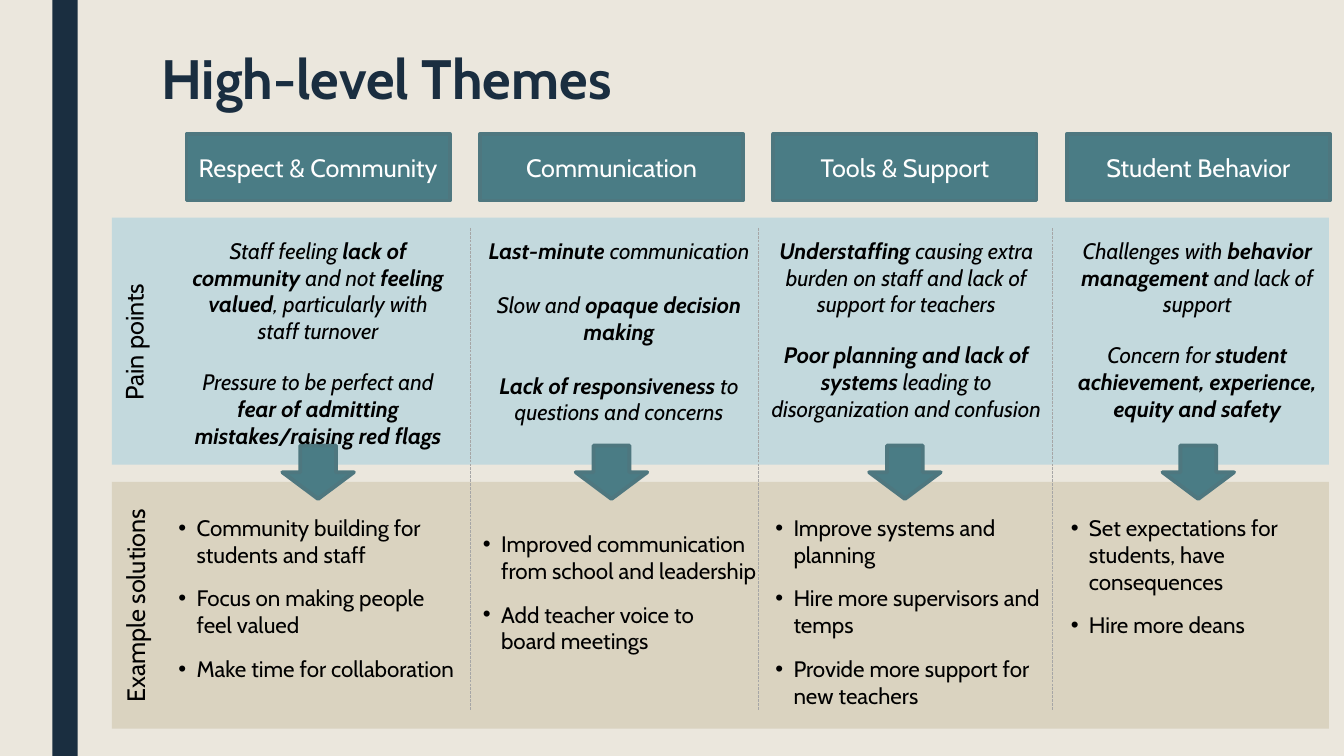
from dataclasses import dataclass

from lxml.etree import SubElement
from pptx import Presentation
from pptx.dml.color import RGBColor
from pptx.enum.dml import MSO_LINE
from pptx.enum.shapes import MSO_CONNECTOR, MSO_SHAPE
from pptx.enum.text import MSO_ANCHOR, MSO_AUTO_SIZE, PP_ALIGN
from pptx.oxml.ns import qn
from pptx.shapes.autoshape import Shape
from pptx.slide import Slide
from pptx.text.text import TextFrame, _Paragraph
from pptx.util import Inches, Pt

FONT = "Cabin"
NAVY, TEAL, TEAL_EDGE = "1A2E40", "4A7C85", "4E777F"
BLUE, SAND, CREAM = "C3D9DD", "DAD3C0", "EBE7DD"
BLACK, WHITE, GREY = "000000", "FFFFFF", "A6A6A6"

HEAD_LEFT, HEAD_WIDTH, PITCH = 1.85, 2.61, 2.91
ARROW_WIDTH = 0.71


@dataclass
class Box:
    left: float
    top: float
    width: float
    height: float


@dataclass
class Theme:
    """One column; asterisks in the pain points enclose bold words."""
    heading: str
    pain_box: Box
    pain_gap: float
    pains: list[str]
    list_box: Box
    solutions: list[str]


@dataclass
class Band:
    label: str
    box: Box
    label_box: Box
    color: str


THEMES = [
    Theme("Respect & Community", Box(1.85, 2.3, 2.61, 2.26), 17,
          ["Staff feeling *lack of community* and not *feeling valued*, "
           "particularly with staff turnover",
           "Pressure to be perfect and *fear of admitting mistakes/raising red flags*"],
          Box(1.77, 5.05, 2.76, 1.78),
          ["Community building for students and staff",
           "Focus on making people feel valued",
           "Make time for collaboration"]),
    Theme("Communication", Box(4.77, 2.3, 2.74, 1.99), 19.4,
          ["*Last-minute *communication",
           "Slow and *opaque decision making*",
           "*Lack of responsiveness *to questions and concerns"],
          Box(4.79, 5.21, 2.76, 1.35),
          ["Improved communication from school and leadership",
           "Add teacher voice to\nboard meetings"]),
    Theme("Tools & Support", Box(7.62, 2.3, 2.74, 2.26), 17,
          ["*Understaffing *causing extra burden on staff and lack of support for teachers",
           "*Poor planning and lack of systems* leading to disorganization and confusion"],
          Box(7.69, 5.05, 2.76, 2.05),
          ["Improve systems and planning",
           "Hire more supervisors and temps",
           "Provide more support for new teachers"]),
    Theme("Student Behavior", Box(10.57, 2.3, 2.61, 1.95), 17,
          ["Challenges with *behavior management* and lack of support",
           "Concern for *student achievement, experience, equity and safety*"],
          Box(10.62, 5.05, 2.76, 1.35),
          ["Set expectations for students, have consequences",
           "Hire more deans"]),
]
BANDS = [
    Band("Pain points", Box(1.11, 2.16, 12.07, 2.45), Box(0.63, 3.18, 1.39, 0.4), BLUE),
    Band("Example solutions", Box(1.11, 4.78, 12.07, 2.45), Box(0.27, 5.8, 2.14, 0.4), SAND),
]
DIVIDERS = [4.66, 7.52, 10.44]


def rgb(color: str) -> RGBColor:
    return RGBColor.from_string(color)


def inches(box: Box) -> tuple[int, int, int, int]:
    return Inches(box.left), Inches(box.top), Inches(box.width), Inches(box.height)


def place(sp: Shape, box: Box) -> None:
    sp.left, sp.top, sp.width, sp.height = inches(box)


def add_run(p: _Paragraph, text: str, size: float, color: str = BLACK,
            bold: bool = False, italic: bool = False) -> None:
    r = p.add_run()
    r.text = text
    r.font.name, r.font.size = FONT, Pt(size)
    r.font.bold, r.font.italic = bold, italic
    r.font.color.rgb = rgb(color)


def add_preset(s: Slide, kind: MSO_SHAPE, box: Box, fill: str, edge: str = "") -> Shape:
    sp = s.shapes.add_shape(kind, *inches(box))
    sp.shadow.inherit = False
    sp.fill.solid()
    sp.fill.fore_color.rgb = rgb(fill)
    if edge:
        sp.line.color.rgb = rgb(edge)
        sp.line.width = Pt(2.75)
    else:
        sp.line.fill.background()
    return sp


def prepare_frame(tf: TextFrame) -> None:
    """Set up a wrapping, top-aligned frame without side insets."""
    tf.word_wrap = True
    tf.auto_size = MSO_AUTO_SIZE.NONE
    tf.vertical_anchor = MSO_ANCHOR.TOP
    tf.margin_left = tf.margin_right = 0


def next_paragraph(tf: TextFrame, index: int) -> _Paragraph:
    return tf.add_paragraph() if index else tf.paragraphs[0]


def add_heading(s: Slide, text: str, left: float) -> None:
    sp = add_preset(s, MSO_SHAPE.RECTANGLE, Box(left, 1.33, HEAD_WIDTH, 0.66), TEAL, TEAL_EDGE)
    sp.text_frame.vertical_anchor = MSO_ANCHOR.MIDDLE
    p = sp.text_frame.paragraphs[0]
    p.alignment = PP_ALIGN.CENTER
    add_run(p, text, 18, WHITE)


def add_band(s: Slide, band: Band) -> None:
    add_preset(s, MSO_SHAPE.RECTANGLE, band.box, band.color)
    sp = s.shapes.add_textbox(*inches(band.label_box))
    sp.rotation = 270
    sp.text_frame.word_wrap = False
    add_run(sp.text_frame.paragraphs[0], band.label, 18)


def add_divider(s: Slide, x: float) -> None:
    line = s.shapes.add_connector(MSO_CONNECTOR.STRAIGHT, Inches(x), Inches(2.26),
                                  Inches(x), Inches(7.04))
    line.line.color.rgb = rgb(GREY)
    line.line.width = Pt(0.25)
    line.line.dash_style = MSO_LINE.LONG_DASH
    SubElement(line._element.spPr, qn("a:effectLst"))


def add_pains(s: Slide, theme: Theme) -> None:
    tf = s.shapes.add_textbox(*inches(theme.pain_box)).text_frame
    prepare_frame(tf)
    for i, pain in enumerate(theme.pains):
        p = next_paragraph(tf, i)
        p.alignment = PP_ALIGN.CENTER
        p.space_before = Pt(theme.pain_gap if i else 0)
        for j, part in enumerate(pain.split("*")):
            if part:
                add_run(p, part, 16, bold=j % 2 == 1, italic=True)


def fill_solutions(s: Slide, sp: Shape, theme: Theme) -> None:
    """Fill a body placeholder with bullets and bring it to the front."""
    place(sp, theme.list_box)
    s.shapes._spTree.append(sp._element)
    tf = sp.text_frame
    prepare_frame(tf)
    for i, solution in enumerate(theme.solutions):
        p = next_paragraph(tf, i)
        p.space_before, p.space_after = Pt(0), Pt(12)
        pPr = p._p.get_or_add_pPr()
        pPr.set("marL", str(Inches(0.18)))
        pPr.set("indent", str(-Inches(0.18)))
        SubElement(pPr, qn("a:buChar")).set("char", "•")
        for j, text in enumerate(solution.split("\n")):
            if j:
                p.add_line_break()
            add_run(p, text, 16)


def fill_title(s: Slide, text: str) -> None:
    sp = s.shapes.title
    place(sp, Box(1.5, 0.45, 11.56, 0.73))
    sp.text_frame.auto_size = MSO_AUTO_SIZE.NONE
    sp.text_frame.vertical_anchor = MSO_ANCHOR.MIDDLE
    p = sp.text_frame.paragraphs[0]
    p.alignment = PP_ALIGN.LEFT
    p.line_spacing = 0.89
    add_run(p, text, 39.6, NAVY, bold=True)


def main() -> None:
    prs = Presentation()
    prs.slide_width, prs.slide_height = Inches(13.33), Inches(7.5)
    s = prs.slides.add_slide(prs.slide_layouts.get_by_name("Comparison"))
    s.background.fill.solid()
    s.background.fill.fore_color.rgb = rgb(CREAM)

    add_preset(s, MSO_SHAPE.RECTANGLE, Box(0.52, 0, 0.25, 7.5), NAVY)
    fill_title(s, "High-level Themes")
    for band in BANDS:
        add_band(s, band)
    for x in DIVIDERS:
        add_divider(s, x)
    bodies = [sp for sp in s.placeholders if sp.placeholder_format.idx > 0]
    for i, (theme, body) in enumerate(zip(THEMES, bodies)):
        left = HEAD_LEFT + i * PITCH
        add_heading(s, theme.heading, left)
        arrow_left = left + (HEAD_WIDTH - ARROW_WIDTH) / 2
        add_preset(s, MSO_SHAPE.DOWN_ARROW, Box(arrow_left, 4.42, ARROW_WIDTH, 0.53),
                   TEAL, TEAL_EDGE)
        add_pains(s, theme)
        fill_solutions(s, body, theme)
    prs.save("out.pptx")


if __name__ == "__main__":
    main()
